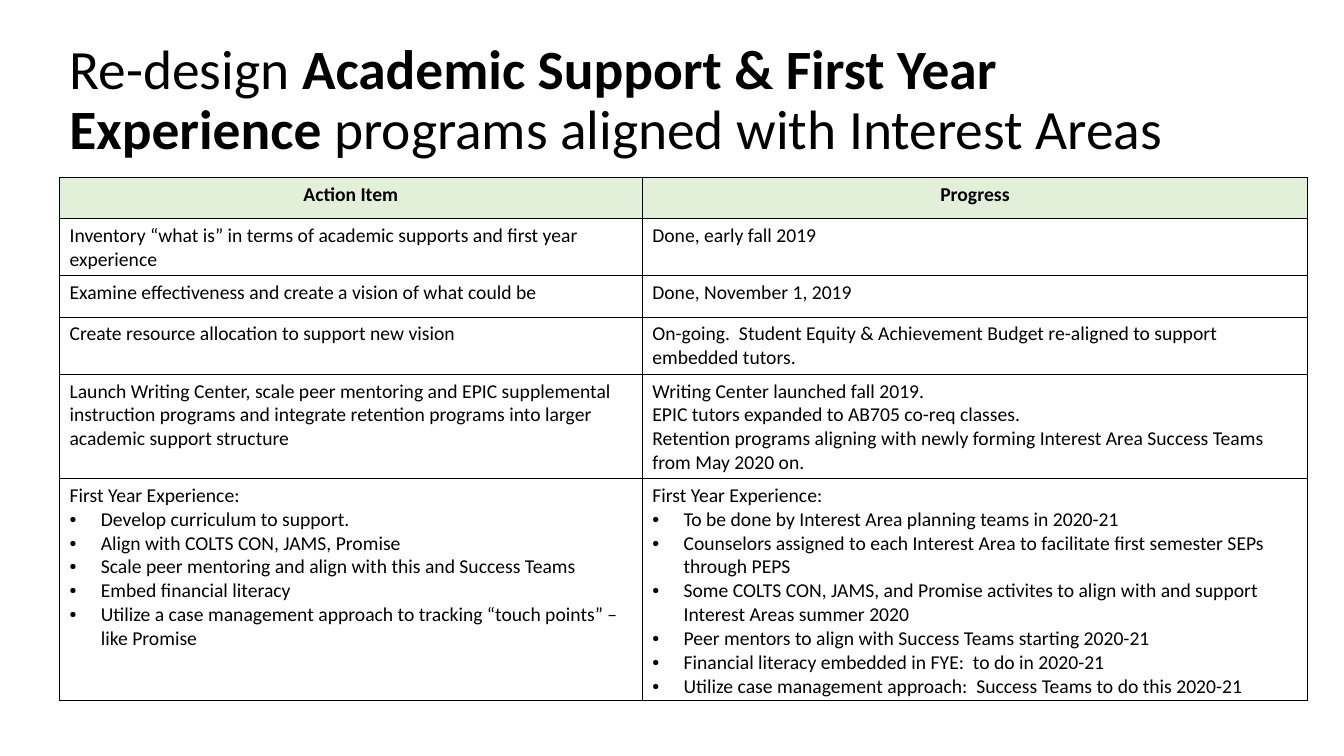
from lxml.etree import SubElement as Sub
from pptx import Presentation
from pptx.dml.color import RGBColor
from pptx.enum.text import MSO_ANCHOR as Anchor, PP_ALIGN as Align
from pptx.oxml.ns import qn
from pptx.util import Inches, Pt

BLACK, GREEN = "000000", "E2F0D9"


def color(code):
    return RGBColor.from_string(code)


def style(run, size, bold):
    look = {"name": "Calibri", "size": Pt(size), "bold": bold}
    for key, val in look.items():
        setattr(run.font, key, val)
    run.font.color.rgb = color(BLACK)


deck = Presentation()
deck.slide_width, deck.slide_height = Inches(13.33), Inches(7.5)
slide = deck.slides.add_slide(deck.slide_layouts[6])

# Title
box = slide.shapes.add_textbox(Inches(0.59), Inches(0.28), Inches(11.5), Inches(1.45))
frame = box.text_frame
frame.word_wrap = True
frame.vertical_anchor = Anchor.MIDDLE
head = frame.paragraphs[0]
head.line_spacing = 0.9
for text, bold in [
    ("Re-design ", False),
    ("Academic Support & First Year Experience", True),
    (" programs aligned with Interest Areas", False),
]:
    run = head.add_run()
    run.text = text
    style(run, 39.6, bold)

# Table text: one list of paragraphs per cell, "• " starts a bullet
rows = [
    (["Action Item"], ["Progress"]),
    (["Inventory “what is” in terms of academic supports and first year experience"],
     ["Done, early fall 2019"]),
    (["Examine effectiveness and create a vision of what could be"],
     ["Done, November 1, 2019"]),
    (["Create resource allocation to support new vision"],
     ["On-going.  Student Equity & Achievement Budget re-aligned to support embedded tutors."]),
    (["Launch Writing Center, scale peer mentoring and EPIC supplemental instruction "
      "programs and integrate retention programs into larger academic support structure"],
     ["Writing Center launched fall 2019.",
      "EPIC tutors expanded to AB705 co-req classes.",
      "Retention programs aligning with newly forming Interest Area Success Teams "
      "from May 2020 on."]),
    (["First Year Experience:",
      "• Develop curriculum to support.",
      "• Align with COLTS CON, JAMS, Promise",
      "• Scale peer mentoring and align with this and Success Teams",
      "• Embed financial literacy",
      "• Utilize a case management approach to tracking “touch points” – like Promise"],
     ["First Year Experience:",
      "• To be done by Interest Area planning teams in 2020-21",
      "• Counselors assigned to each Interest Area to facilitate first semester SEPs through PEPS",
      "• Some COLTS CON, JAMS, and Promise activites to align with and support "
      "Interest Areas summer 2020",
      "• Peer mentors to align with Success Teams starting 2020-21",
      "• Financial literacy embedded in FYE:  to do in 2020-21",
      "• Utilize case management approach:  Success Teams to do this 2020-21"]),
]

# Table grid
high = 0.41
table = slide.shapes.add_table(
    len(rows), 2, Inches(0.59), Inches(1.76), Inches(12.38), Inches(high * len(rows))
).table
table.first_row = table.horz_banding = False
for col, wide in zip(table.columns, (5.78, 6.6)):
    col.width = Inches(wide)

# Cells
for i, row in enumerate(rows):
    table.rows[i].height = Inches(high)
    for j, lines in enumerate(row):
        cell = table.cell(i, j)

        # Borders
        props = cell._tc.get_or_add_tcPr()
        for side in ("lnL", "lnR", "lnT", "lnB"):
            edge = Sub(props, qn(f"a:{side}"), w=str(Pt(1)))
            Sub(Sub(edge, qn("a:solidFill")), qn("a:srgbClr"), val=BLACK)

        # Fill
        if i == 0:
            cell.fill.solid()
            cell.fill.fore_color.rgb = color(GREEN)
        else:
            cell.fill.background()

        # Text
        for k, line in enumerate(lines):
            body = cell.text_frame
            para = body.add_paragraph() if k else body.paragraphs[0]
            para.alignment = Align.CENTER if i == 0 else Align.LEFT
            if line.startswith("• "):
                form = para._p.get_or_add_pPr()
                form.set("marL", str(Inches(0.31)))
                form.set("indent", str(-Inches(0.31)))
                Sub(form, qn("a:buFont"), typeface="Arial")
                Sub(form, qn("a:buChar"), char="•")
            run = para.add_run()
            run.text = line.removeprefix("• ")
            style(run, 14, i == 0)

deck.save("out.pptx")
